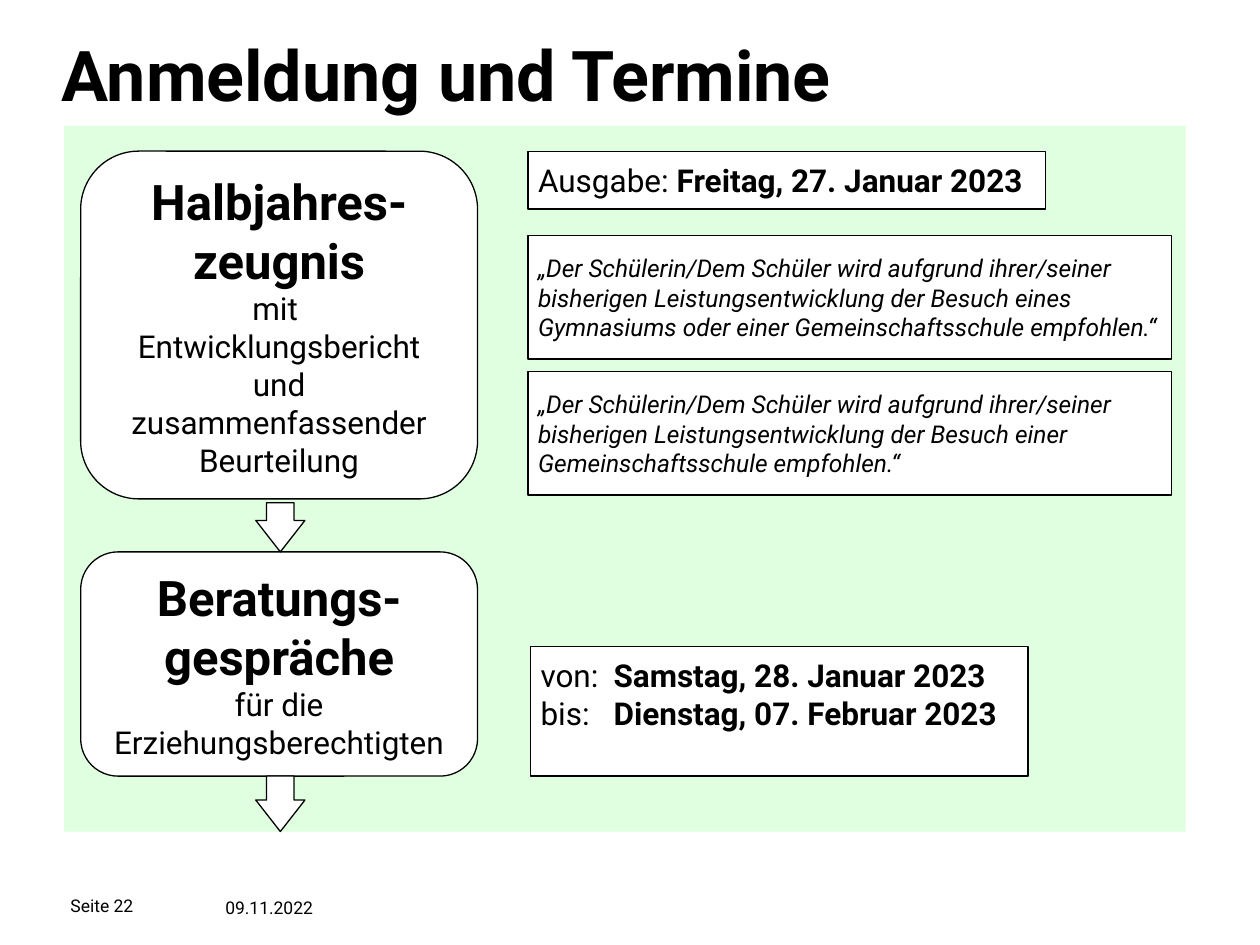
from dataclasses import dataclass

import lxml.etree
import pptx
import pptx.dml.color
import pptx.enum.shapes
import pptx.enum.text
import pptx.oxml.ns
import pptx.util

Inches = pptx.util.Inches
Pt = pptx.util.Pt
Shapes = pptx.enum.shapes.MSO_SHAPE
Anchor = pptx.enum.text.MSO_ANCHOR
Align = pptx.enum.text.PP_ALIGN


@dataclass(frozen=True)
class Theme:
    font: str = "Roboto"
    ink: str = "000000"
    paper: str = "FFFFFF"
    panel: str = "CCFFCC"
    panel_opacity: int = 60
    line: float = 0.75
    title: int = 40
    heading: int = 28
    body: int = 18
    quote: int = 14
    footer: int = 10


def rgb(value):
    return pptx.dml.color.RGBColor.from_string(value)


def add_element(parent, tag, **attributes):
    return lxml.etree.SubElement(parent, pptx.oxml.ns.qn(tag), **attributes)


class PageBuilder:
    def __init__(self, page, theme):
        self.page = page
        self.theme = theme

    def shape(self, kind, left, top, width, height):
        shape = self.page.shapes.add_shape(
            kind, Inches(left), Inches(top), Inches(width), Inches(height))
        shape.shadow.inherit = False
        shape.fill.solid()
        shape.fill.fore_color.rgb = rgb(self.theme.paper)
        shape.line.color.rgb = rgb(self.theme.ink)
        shape.line.width = Pt(self.theme.line)
        return shape

    def frame(self, shape, inset_x, inset_y, anchor):
        frame = shape.text_frame
        frame.word_wrap = True
        frame.vertical_anchor = anchor
        frame.margin_left = frame.margin_right = Inches(inset_x)
        frame.margin_top = frame.margin_bottom = Inches(inset_y)
        return frame

    def set_text(self, para, text, size, bold=False, italic=False,
                 align=Align.LEFT):
        para.text = text
        para.alignment = align
        self.style(para, size)
        para.font.bold = bold
        para.font.italic = italic

    def style(self, para, size):
        para.font.name = self.theme.font
        para.font.size = Pt(size)
        para.font.color.rgb = rgb(self.theme.ink)

    def panel(self, left, top, width, height):
        panel = self.shape(Shapes.RECTANGLE, left, top, width, height)
        panel.fill.fore_color.rgb = rgb(self.theme.panel)
        panel.line.fill.background()
        color = panel.fill._xPr.find(".//" + pptx.oxml.ns.qn("a:srgbClr"))
        add_element(color, "a:alpha", val=str(self.theme.panel_opacity * 1000))

    def label(self, text, left, top, width, height, size, bold=False,
              inset=(0.1, 0.05), anchor=Anchor.TOP):
        box = self.page.shapes.add_textbox(
            Inches(left), Inches(top), Inches(width), Inches(height))
        frame = self.frame(box, *inset, anchor)
        self.set_text(frame.paragraphs[0], text, size, bold)

    def step(self, heading, details, top, height, inset_y):
        box = self.shape(Shapes.ROUNDED_RECTANGLE, 0.64, top, 3.15, height)
        box.adjustments[0] = 0.167
        frame = self.frame(box, 0.04, inset_y, Anchor.MIDDLE)
        self.set_text(frame.paragraphs[0], heading, self.theme.heading,
                      bold=True, align=Align.CENTER)
        self.set_text(frame.add_paragraph(), details, self.theme.body,
                      align=Align.CENTER)

    def arrow(self, top, height):
        arrow = self.shape(Shapes.DOWN_ARROW, 2.03, top, 0.39, height)
        arrow.adjustments[0] = 0.56
        arrow.adjustments[1] = 0.64

    def quote(self, text, top):
        box = self.shape(Shapes.RECTANGLE, 4.19, top, 5.11, 0.98)
        frame = self.frame(box, 0.08, 0.08, Anchor.MIDDLE)
        self.set_text(frame.paragraphs[0], text, self.theme.quote, italic=True)

    def dates(self, rows, left, top, width, height, anchor, tab=None):
        """Each row is a plain lead followed by a bold date."""
        box = self.shape(Shapes.RECTANGLE, left, top, width, height)
        frame = self.frame(box, 0.08, 0.08, anchor)
        for index, (lead, date) in enumerate(rows):
            para = frame.add_paragraph() if index else frame.paragraphs[0]
            para.alignment = Align.LEFT
            if tab:
                tabs = add_element(para._p.get_or_add_pPr(), "a:tabLst")
                add_element(tabs, "a:tab", pos=str(Inches(tab)), algn="l")
            self.style(para, self.theme.body)
            for text, bold in ((lead, False), (date, True)):
                span = para.add_run()
                span.text = text
                span.font.bold = bold


def main():
    deck = pptx.Presentation()
    deck.slide_width, deck.slide_height = Inches(10), Inches(7.5)
    theme = Theme()
    builder = PageBuilder(deck.slides.add_slide(deck.slide_layouts[6]), theme)

    builder.label("Seite 22", 0.56, 7.07, 1.26, 0.24, theme.footer,
                  inset=(0, 0), anchor=Anchor.MIDDLE)
    builder.label("09.11.2022", 1.69, 7.07, 1.26, 0.24, theme.footer)
    builder.panel(0.51, 1, 8.9, 5.6)
    builder.label("Anmeldung und Termine", 0.39, 0.2, 6.69, 0.77,
                  theme.title, bold=True)

    builder.step("Halbjahres-zeugnis",
                 "mit \vEntwicklungsbericht\vund zusammenfassender Beurteilung",
                 1.2, 2.76, 0.39)
    builder.step("Beratungs-gespräche", "für die Erziehungsberechtigten",
                 4.38, 1.78, 0.2)
    builder.arrow(3.99, 0.39)
    builder.arrow(6.16, 0.44)

    builder.dates([("Ausgabe: ", "Freitag, 27. Januar 2023")],
                  4.19, 1.2, 4.11, 0.46, Anchor.MIDDLE)
    schools = ("eines Gymnasiums oder einer Gemeinschaftsschule",
               "einer Gemeinschaftsschule")
    for index, school in enumerate(schools):
        builder.quote("„Der Schülerin/Dem Schüler wird aufgrund ihrer/seiner "
                      "bisherigen Leistungsentwicklung der Besuch "
                      f"{school} empfohlen.“", 1.87 + index * 1.08)
    builder.dates([("von: \t", "Samstag, 28. Januar 2023"),
                   ("bis:\t", "Dienstag, 07. Februar 2023")],
                  4.21, 5.13, 3.95, 1.03, Anchor.TOP, tab=0.58)

    deck.save("out.pptx")


if __name__ == "__main__":
    main()
